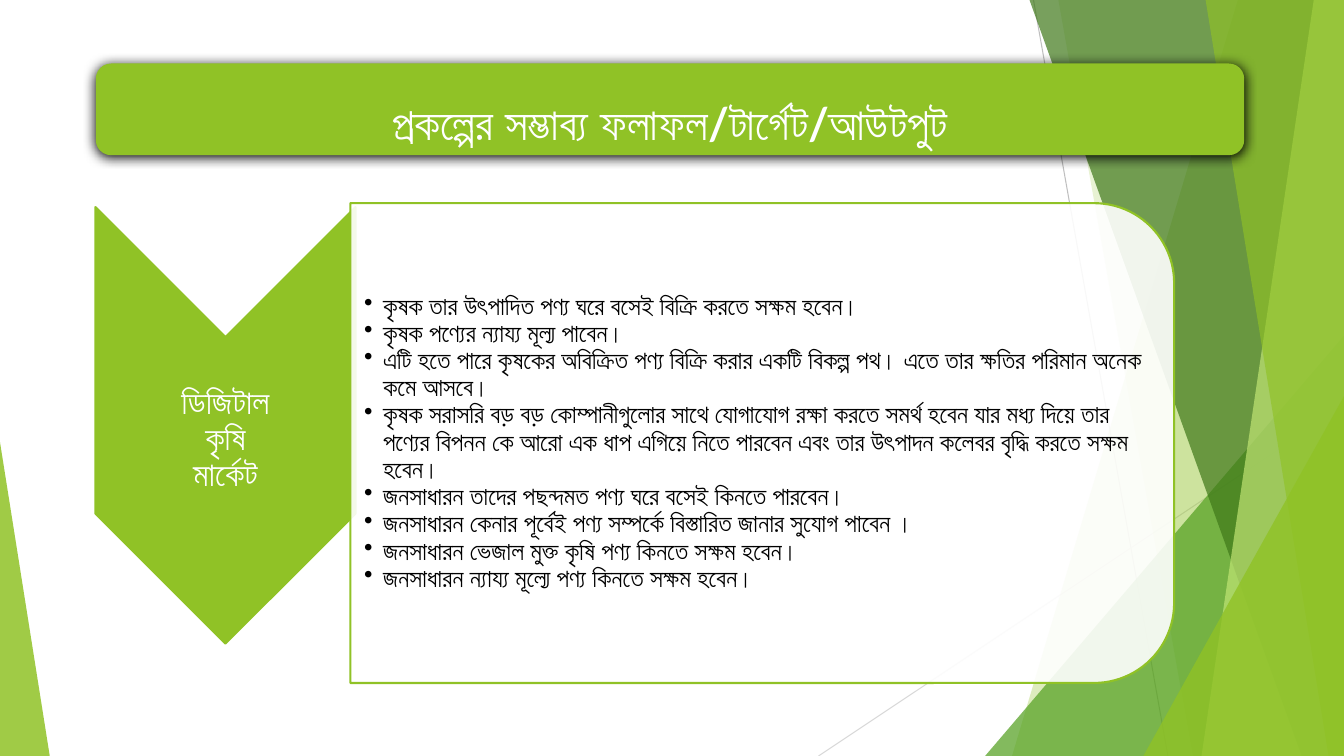
"""Build a slide on the expected results of a digital farm market."""
import dataclasses
import typing

import lxml.etree
import pptx
import pptx.dml.color
import pptx.enum.shapes
import pptx.enum.text
import pptx.oxml.ns
import pptx.util

WIDTH: int = pptx.util.Inches(13.33)
HEIGHT: int = pptx.util.Inches(7.5)
PRESET = pptx.enum.shapes.MSO_SHAPE
ALIGN = pptx.enum.text.PP_ALIGN


@dataclasses.dataclass(frozen=True)
class Theme:
    lime: str = "90C226"
    green: str = "54A021"
    forest: str = "3F7819"
    pale_lime: str = "C0E474"
    white: str = "FFFFFF"
    black: str = "000000"
    grey: str = "BFBFBF"
    light_grey: str = "D9D9D9"
    title_font: str = "Lato"
    body_font: str = "Arial"
    title_size: float = 32
    label_size: float = 24
    body_size: float = 18
    outline: float = 1.5
    hairline: float = 0.75


THEME = Theme()


@dataclasses.dataclass(frozen=True)
class Area:
    """Place on the slide, in percent of its width and height."""
    left: float
    top: float
    width: float
    height: float

    def lengths(self) -> tuple[int, int, int, int]:
        return across(self.left), down(self.top), across(self.width), down(self.height)


@dataclasses.dataclass(frozen=True)
class Ray:
    start: tuple[float, float]
    end: tuple[float, float]
    colour: str


@dataclasses.dataclass(frozen=True)
class Facet:
    """Band reaching the right edge, given by its left corners."""
    top_left: float
    bottom_left: float
    colour: str
    opacity: int


@dataclasses.dataclass(frozen=True)
class Wedge:
    area: Area
    apex: float
    colour: str
    opacity: int


@dataclasses.dataclass(frozen=True)
class Writing:
    lines: list[str]
    font: str
    size: float
    colour: str
    spacing: float
    align: typing.Any = ALIGN.CENTER
    bold: bool = False
    bulleted: bool = False


RAYS = [
    Ray((76.9, 0), (86.9, 100), THEME.grey),
    Ray((100, 53.7), (60.9, 100), THEME.light_grey),
]
BACKDROP = [
    Facet(92.1, 75.3, THEME.lime, 30),
    Facet(78.75, 88.75, THEME.lime, 20),
    Wedge(Area(73.3, 44.4, 26.7, 55.6), 1, THEME.green, 72),
    Facet(76.6, 96.85, THEME.forest, 70),
    Facet(97.75, 89.4, THEME.pale_lime, 70),
    Facet(89.7, 98.85, THEME.lime, 65),
    Wedge(Area(85.07, 52.4, 14.93, 47.6), 1, THEME.lime, 80),
    Wedge(Area(0, 58.5, 3.7, 41.5), 0, THEME.lime, 85),
]
TITLE = Writing(["প্রকল্পের সম্ভাব্য ফলাফল/টার্গেট/আউটপুট"], THEME.title_font,
                THEME.title_size, THEME.white, 1.5, bold=True)
MARKET = Writing(["ডিজিটাল", "কৃষি", "মার্কেট"], THEME.body_font,
                 THEME.label_size, THEME.white, 0.9, bold=True)
BENEFITS = Writing([
    "কৃষক তার উৎপাদিত পণ্য ঘরে বসেই বিক্রি করতে সক্ষম হবেন।",
    "কৃষক পণ্যের ন্যায্য মূল্য পাবেন।",
    "এটি হতে পারে কৃষকের অবিক্রিত পণ্য বিক্রি করার একটি বিকল্প পথ। এতে তার ক্ষতির পরিমান অনেক কমে আসবে।",
    "কৃষক সরাসরি বড় বড় কোম্পানীগুলোর সাথে যোগাযোগ রক্ষা করতে সমর্থ হবেন যার মধ্য দিয়ে তার পণ্যের "
    "বিপনন কে আরো এক ধাপ এগিয়ে নিতে পারবেন এবং তার উৎপাদন কলেবর বৃদ্ধি করতে সক্ষম হবেন।",
    "জনসাধারন তাদের পছন্দমত পণ্য ঘরে বসেই কিনতে পারবেন।",
    "জনসাধারন কেনার পূর্বেই পণ্য সম্পর্কে বিস্তারিত জানার সুযোগ পাবেন ।",
    "জনসাধারন ভেজাল মুক্ত কৃষি পণ্য কিনতে সক্ষম হবেন।",
    "জনসাধারন ন্যায্য মূল্যে পণ্য কিনতে সক্ষম হবেন।",
], THEME.body_font, THEME.body_size, THEME.black, 0.9, ALIGN.LEFT, bulleted=True)


def across(percent: float) -> int:
    return round(WIDTH * percent / 100)


def down(percent: float) -> int:
    return round(HEIGHT * percent / 100)


def rgb(colour: str) -> pptx.dml.color.RGBColor:
    return pptx.dml.color.RGBColor.from_string(colour)


def add_node(parent: typing.Any, tag: str, **attributes: str) -> typing.Any:
    return lxml.etree.SubElement(parent, pptx.oxml.ns.qn(tag), attributes)


def paint(shape: typing.Any, colour: str, opacity: int = 100, outline: str = "") -> None:
    shape.shadow.inherit = False
    shape.fill.solid()
    shape.fill.fore_color.rgb = rgb(colour)
    if opacity < 100:
        tint = shape.element.spPr.find(".//" + pptx.oxml.ns.qn("a:srgbClr"))
        add_node(tint, "a:alpha", val=str(opacity * 1000))
    if outline:
        shape.line.color.rgb = rgb(outline)
        shape.line.width = pptx.util.Pt(THEME.outline)
    else:
        shape.line.fill.background()


def draw_ray(shapes: typing.Any, ray: Ray) -> None:
    line = shapes.add_connector(
        pptx.enum.shapes.MSO_CONNECTOR.STRAIGHT, across(ray.start[0]), down(ray.start[1]),
        across(ray.end[0]), down(ray.end[1]))
    line.line.color.rgb = rgb(ray.colour)
    line.line.width = pptx.util.Pt(THEME.hairline)
    add_node(line.element.spPr, "a:effectLst")


def draw_backdrop(shapes: typing.Any, part: Facet | Wedge) -> None:
    if isinstance(part, Facet):
        outline = shapes.build_freeform(across(part.top_left), 0)
        outline.add_line_segments(
            [(WIDTH, 0), (WIDTH, HEIGHT), (across(part.bottom_left), HEIGHT)], close=True)
        shape = outline.convert_to_shape()
    else:
        shape = shapes.add_shape(PRESET.ISOSCELES_TRIANGLE, *part.area.lengths())
        shape.adjustments[0] = part.apex
    paint(shape, part.colour, part.opacity)


def draw_turned(shapes: typing.Any, preset: typing.Any, area: Area, colour: str, opacity: int) -> None:
    left, top, width, height = area.lengths()
    shift = (width - height) // 2
    shape = shapes.add_shape(preset, left + shift, top - shift, height, width)
    shape.rotation = 90
    paint(shape, colour, opacity, THEME.lime)


def write(frame: typing.Any, writing: Writing) -> None:
    frame.word_wrap = True
    frame.vertical_anchor = pptx.enum.text.MSO_ANCHOR.MIDDLE
    frame.text = "\n".join(writing.lines)
    for paragraph in frame.paragraphs:
        paragraph.alignment = writing.align
        paragraph.line_spacing = writing.spacing
        font = paragraph.runs[0].font
        font.name, font.size, font.bold = writing.font, pptx.util.Pt(writing.size), writing.bold
        font.color.rgb = rgb(writing.colour)
        if writing.bulleted:
            paragraph.level = 1
            properties = paragraph._p.get_or_add_pPr()
            properties.set("marL", str(across(1.4)))
            properties.set("indent", str(-across(1.4)))
            add_node(properties, "a:buChar", char="•")


def draw_writing(shapes: typing.Any, area: Area, writing: Writing, left: float, top: float) -> None:
    frame = shapes.add_textbox(*area.lengths()).text_frame
    frame.margin_left, frame.margin_top = across(left), down(top)
    frame.margin_right, frame.margin_bottom = across(0.1), down(0.1)
    write(frame, writing)


def draw_banner(shapes: typing.Any, area: Area) -> None:
    banner = shapes.add_shape(PRESET.ROUNDED_RECTANGLE, *area.lengths())
    paint(banner, THEME.lime)
    effects = banner.element.spPr.find(pptx.oxml.ns.qn("a:effectLst"))
    shadow = add_node(effects, "a:outerShdw", blurRad=str(pptx.util.Pt(8.5)),
                      dist=str(pptx.util.Pt(1)), dir="5400000", rotWithShape="0")
    add_node(shadow, "a:srgbClr", val=THEME.black)
    write(banner.text_frame, TITLE)


def main() -> None:
    deck = pptx.Presentation()
    deck.slide_width, deck.slide_height = WIDTH, HEIGHT
    shapes = deck.slides.add_slide(deck.slide_layouts[6]).shapes
    for ray in RAYS:
        draw_ray(shapes, ray)
    for part in BACKDROP:
        draw_backdrop(shapes, part)
    draw_turned(shapes, PRESET.CHEVRON, Area(7.1, 27.4, 19.35, 57.73), THEME.lime, 100)
    draw_writing(shapes, Area(7.1, 44.53, 19.35, 23.47), MARKET, 0.1, 3.9)
    draw_turned(shapes, PRESET.ROUND_2_SAME_RECTANGLE, Area(26.07, 26.87, 61.29, 63.47), THEME.white, 90)
    draw_writing(shapes, Area(26.05, 30, 59.5, 57.2), BENEFITS, 1.05, 0.1)
    draw_banner(shapes, Area(7.13, 8.4, 85.45, 12.13))
    deck.save("out.pptx")


if __name__ == "__main__":
    main()
